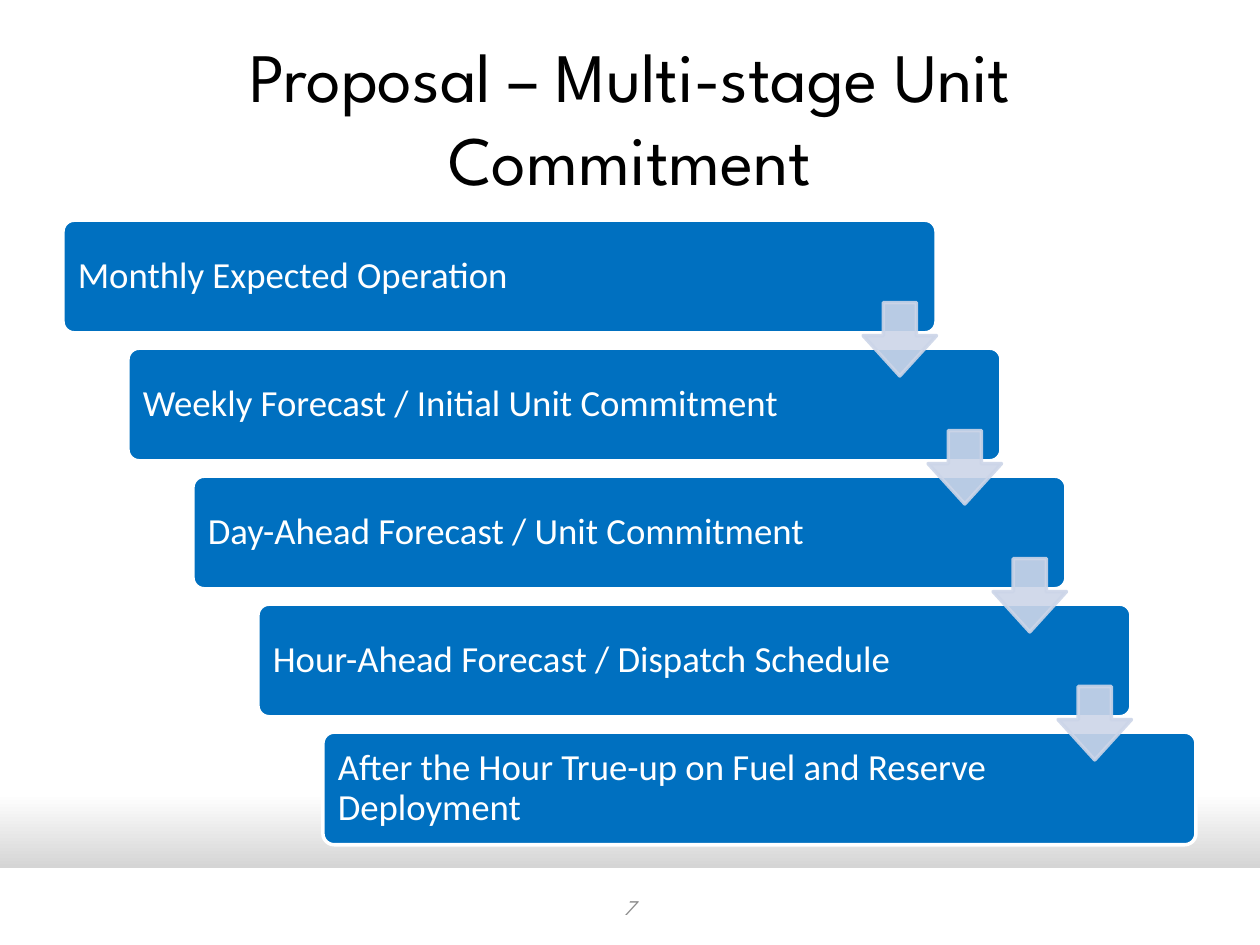
from lxml.etree import SubElement
from pptx import Presentation
from pptx.dml.color import RGBColor
from pptx.enum.shapes import MSO_SHAPE as Shape
from pptx.enum.text import MSO_ANCHOR as Anchor, MSO_AUTO_SIZE as AutoSize, PP_ALIGN as Align
from pptx.oxml.ns import qn
from pptx.util import Cm, Pt

TITLE = "Proposal – Multi-stage Unit Commitment"
STAGES = [
    "Monthly Expected Operation",
    "Weekly Forecast / Initial Unit Commitment",
    "Day-Ahead Forecast / Unit Commitment",
    "Hour-Ahead Forecast / Dispatch Schedule",
    "After the Hour True-up on Fuel and Reserve Deployment",
]
PAGE_NUMBER = "7"

THEME = {
    "heading_font": "League Spartan", "body_font": "Calibri",
    "title_size": 39.6, "stage_size": 21, "number_size": 12, "line_width": 2,
    "white": "FFFFFF", "black": "000000", "blue": "0070C0",
    "arrow": "CCD5E8", "gray": "8C8C8C", "shade": "A6A6A6",
}

STAGE_LEFT, STAGE_TOP, STAGE_WIDTH, STAGE_HEIGHT = 1.27, 4.44, 17.6, 2.27
SHIFT_X, SHIFT_Y = 1.31, 2.58
LABEL_OFFSET, LABEL_WIDTH, LABEL_INSET = 0.07, 14.68, 0.23
ARROW_LEFT, ARROW_TOP, ARROW_SIZE = 17.4, 6.1, 1.48


def color(name):
    return RGBColor.from_string(THEME[name])


def place(shape, left, top, width, height):
    shape.left, shape.top, shape.width, shape.height = map(Cm, (left, top, width, height))


def write(shape, text, *, size, font, fill, align=Align.LEFT, spacing=None, italic=False, inset=None):
    frame = shape.text_frame
    frame.word_wrap = True
    frame.auto_size = AutoSize.NONE
    frame.vertical_anchor = Anchor.MIDDLE
    if inset is not None:
        frame.margin_left = frame.margin_right = Cm(inset)
        frame.margin_top = frame.margin_bottom = Cm(inset)
    paragraph = frame.paragraphs[0]
    paragraph.alignment = align
    paragraph.line_spacing = spacing
    run = paragraph.add_run()
    run.text = text
    run.font.size = Pt(THEME[size])
    run.font.name = THEME[font]
    run.font.italic = italic
    run.font.color.rgb = color(fill)


def add_box(slide, kind, left, top, width, height, fill, line=None, adjustments=()):
    shape = slide.shapes.add_shape(kind, *map(Cm, (left, top, width, height)))
    shape.shadow.inherit = False
    shape.fill.solid()
    shape.fill.fore_color.rgb = color(fill)
    if line:
        shape.line.color.rgb = color(line)
        shape.line.width = Pt(THEME["line_width"])
    else:
        shape.line.fill.background()
    for index, value in enumerate(adjustments):
        shape.adjustments[index] = value
    return shape


def set_opacity(shape, percent):
    for node in shape.element.spPr.iter(qn("a:srgbClr")):
        SubElement(node, qn("a:alpha"), val=str(percent * 1000))


def paint_background(slide):
    fill = slide.background.fill
    fill.gradient()
    fill.gradient_angle = 270
    for stop, (position, name) in zip(fill.gradient_stops, [(0.84, "white"), (1, "shade")]):
        stop.position = position
        stop.color.rgb = color(name)


def add_stages(slide):
    for index, text in enumerate(STAGES):
        left, top = STAGE_LEFT + index * SHIFT_X, STAGE_TOP + index * SHIFT_Y
        add_box(slide, Shape.ROUNDED_RECTANGLE, left, top, STAGE_WIDTH, STAGE_HEIGHT,
                "blue", "white", [0.1])
        label = slide.shapes.add_textbox(
            Cm(left + LABEL_OFFSET), Cm(top + LABEL_OFFSET),
            Cm(LABEL_WIDTH), Cm(STAGE_HEIGHT - 2 * LABEL_OFFSET))
        write(label, text, size="stage_size", font="body_font", fill="white",
              spacing=0.9, inset=LABEL_INSET)
    for index in range(len(STAGES) - 1):
        arrow = add_box(slide, Shape.DOWN_ARROW, ARROW_LEFT + index * SHIFT_X,
                        ARROW_TOP + index * SHIFT_Y, ARROW_SIZE, ARROW_SIZE,
                        "arrow", "arrow", [0.45, 0.55])
        set_opacity(arrow, 90)


def main():
    presentation = Presentation()
    presentation.slide_width, presentation.slide_height = Cm(25.4), Cm(19.05)
    slide = presentation.slides.add_slide(presentation.slide_layouts[5])
    paint_background(slide)
    add_box(slide, Shape.RECTANGLE, 0, 17.5, 25.4, 1.55, "white")
    title = slide.shapes.title
    place(title, 1.27, 0.76, 22.86, 3.18)
    write(title, TITLE, size="title_size", font="heading_font", fill="black", align=Align.CENTER)
    add_stages(slide)
    number = slide.shapes.add_textbox(Cm(9.73), Cm(17.78), Cm(5.92), Cm(1.02))
    write(number, PAGE_NUMBER, size="number_size", font="heading_font", fill="gray",
          align=Align.CENTER, italic=True)
    presentation.save("out.pptx")


if __name__ == "__main__":
    main()
